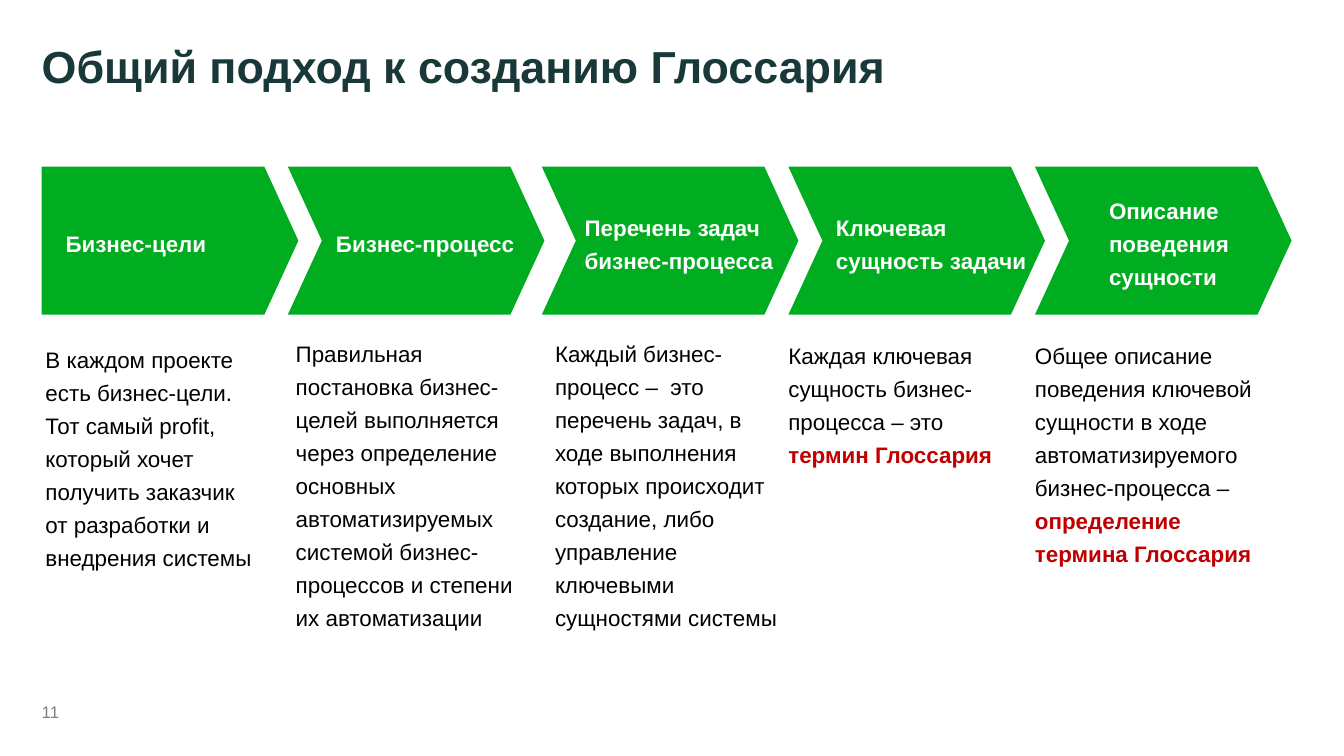
"""Build the slide on the general approach to creating a glossary."""
from dataclasses import dataclass

import pptx
import pptx.dml.color
import pptx.enum.shapes
import pptx.enum.text
import pptx.util

Cm = pptx.util.Cm
Anchor = pptx.enum.text.MSO_ANCHOR
Preset = pptx.enum.shapes.MSO_SHAPE

FONT = "Arial"
GREEN, RED, BLACK, WHITE = "00AD21", "C00000", "000000", "FFFFFF"
DARK_TEAL, GRAY = "19383A", "808080"
MARGIN = 0.79
ARROW_TOP, ARROW_WIDTH, ARROW_HEIGHT = 3.15, 4.85, 2.8
LINE_SPACING = 1.23


@dataclass
class Box:
    left: float
    top: float
    width: float
    height: float


@dataclass
class TextPart:
    text: str
    color: str
    size: float = 12
    bold: bool = False


@dataclass
class Step:
    arrow_left: float
    heading: str
    heading_left: float
    heading_width: float
    body: Box
    description: str
    highlight: str = ""


STEPS = [
    Step(MARGIN, "Бизнес-цели", 1.24, 5.21, Box(0.86, 6.43, 4.09, 4.42),
         "В каждом проекте есть бизнес-цели. Тот самый profit, который хочет "
         "получить заказчик от разработки и внедрения системы"),
    Step(5.44, "Бизнес-процесс", 6.35, 4.6, Box(5.59, 6.32, 4.27, 5.97),
         "Правильная постановка бизнес-целей выполняется через определение основных "
         "автоматизируемых системой бизнес-процессов и степени их автоматизации"),
    Step(10.24, "Перечень задач бизнес-процесса", 11.05, 4.6, Box(10.49, 6.32, 4.24, 5.69),
         "Каждый бизнес-процесс –  это перечень задач, в ходе выполнения которых "
         "происходит создание, либо управление ключевыми сущностями системы"),
    Step(14.9, "Ключевая сущность задачи", 15.8, 3.63, Box(14.9, 6.35, 4.19, 2.51),
         "Каждая ключевая сущность бизнес-процесса – это ", "термин Глоссария"),
    Step(19.56, "Описание поведения сущности", 20.96, 3.38, Box(19.56, 6.35, 4.19, 4.42),
         "Общее описание поведения ключевой сущности в ходе автоматизируемого "
         "бизнес-процесса – ", "определение термина Глоссария"),
]


def rgb(color: str) -> pptx.dml.color.RGBColor:
    return pptx.dml.color.RGBColor.from_string(color)


def lengths(box: Box) -> list[pptx.util.Length]:
    return [Cm(value) for value in (box.left, box.top, box.width, box.height)]


def add_text(slide, box: Box, parts: list[TextPart], anchor=Anchor.TOP,
             line_spacing: float = 1.0) -> None:
    text_frame = slide.shapes.add_textbox(*lengths(box)).text_frame
    text_frame.word_wrap = True
    text_frame.vertical_anchor = anchor
    text_frame.margin_left = text_frame.margin_right = 0
    text_frame.margin_top = text_frame.margin_bottom = 0
    paragraph = text_frame.paragraphs[0]
    paragraph.line_spacing = line_spacing
    for part in parts:
        run = paragraph.add_run()
        run.text = part.text
        run.font.name = FONT
        run.font.size = pptx.util.Pt(part.size)
        run.font.bold = part.bold
        run.font.color.rgb = rgb(part.color)


def add_arrow(slide, left: float, preset: Preset, point: float) -> None:
    box = Box(left, ARROW_TOP, ARROW_WIDTH, ARROW_HEIGHT)
    shape = slide.shapes.add_shape(preset, *lengths(box))
    shape.adjustments[0] = point
    shape.shadow.inherit = False
    shape.fill.solid()
    shape.fill.fore_color.rgb = rgb(GREEN)
    shape.line.fill.background()


def add_step_text(slide, step: Step) -> None:
    heading_box = Box(step.heading_left, ARROW_TOP, step.heading_width, ARROW_HEIGHT)
    add_text(slide, heading_box, [TextPart(step.heading, WHITE, bold=True)],
             Anchor.MIDDLE, LINE_SPACING)
    parts = [TextPart(step.description, BLACK)]
    if step.highlight:
        parts.append(TextPart(step.highlight, RED, bold=True))
    add_text(slide, step.body, parts, line_spacing=LINE_SPACING)


def main() -> None:
    presentation = pptx.Presentation()
    presentation.slide_width = Cm(25.4)
    presentation.slide_height = Cm(14.29)
    slide = presentation.slides.add_slide(presentation.slide_layouts[6])

    add_text(slide, Box(MARGIN, 0.74, 23.8, 1.8),
             [TextPart("Общий подход к созданию Глоссария", DARK_TEAL, 24, True)])
    for index, step in enumerate(STEPS):
        if index == 0:
            add_arrow(slide, step.arrow_left, Preset.PENTAGON, 0.23)
        else:
            add_arrow(slide, step.arrow_left, Preset.CHEVRON, 0.23)
    for step in STEPS:
        add_step_text(slide, step)
    add_text(slide, Box(MARGIN, 12.75, 0.79, 0.89), [TextPart("11", GRAY, 9)], Anchor.BOTTOM)

    presentation.save("out.pptx")


if __name__ == "__main__":
    main()
